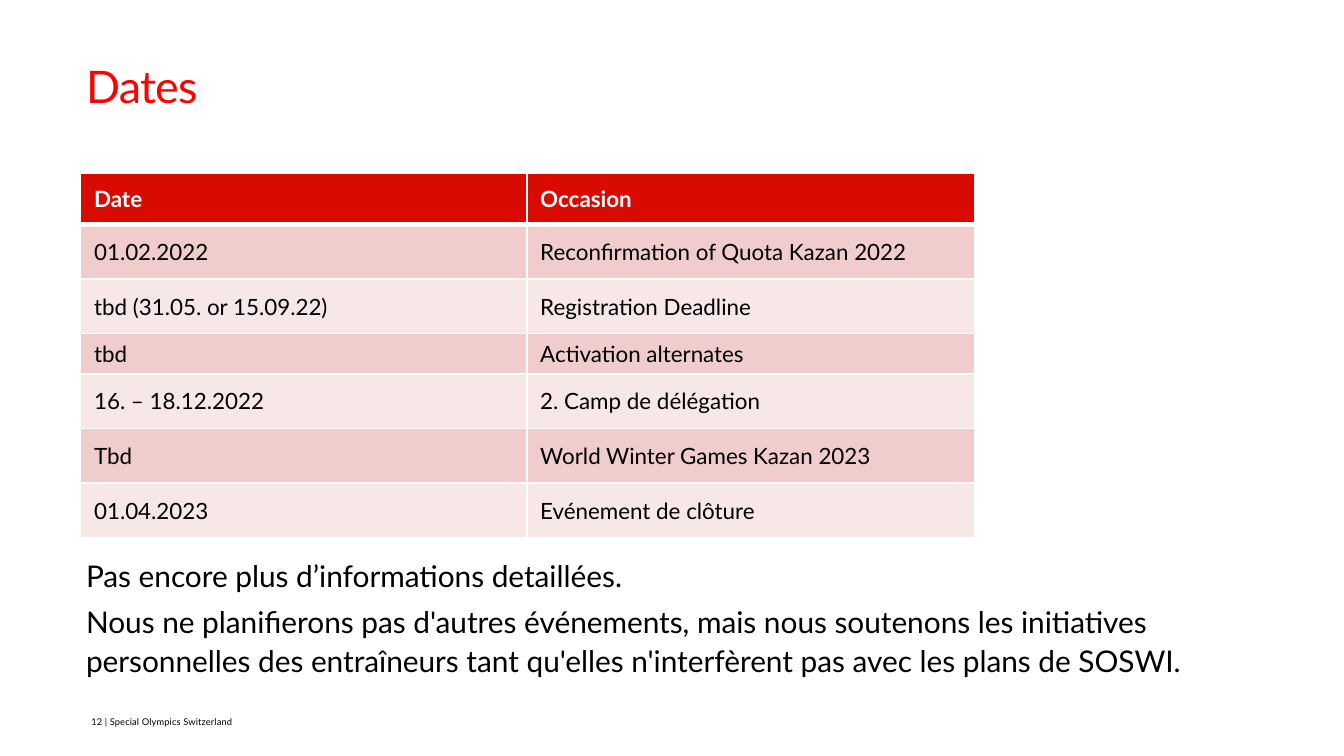
from lxml import etree
from pptx import Presentation
from pptx.dml.color import RGBColor
from pptx.enum.text import MSO_ANCHOR, PP_ALIGN
from pptx.oxml.ns import qn
from pptx.util import Inches, Pt

MIDDLE, TOP = MSO_ANCHOR.MIDDLE, MSO_ANCHOR.TOP
LEFT = PP_ALIGN.LEFT
TITLE_ONLY = 5
FONT = "Lato"
COLORS = {
    "title": "FF0000",
    "text": "000000",
    "white": "FFFFFF",
    "header": "D90B00",
    "odd": "F1CCCC",
    "even": "F8E7E7",
}
DATES = [
    ("Date", "Occasion"),
    ("01.02.2022", "Reconfirmation of Quota Kazan 2022"),
    ("tbd (31.05. or 15.09.22)", "Registration Deadline"),
    ("tbd", "Activation alternates"),
    ("16. – 18.12.2022", "2. Camp de délégation"),
    ("Tbd", "World Winter Games Kazan 2023"),
    ("01.04.2023", "Evénement de clôture"),
]
COLUMN_WIDTHS = [3.32, 3.33]
SPECIAL_HEIGHTS = {0: 0.38, 3: 0.3}  # header and the narrow row
REMARKS = [
    "Pas encore plus d’informations detaillées.",
    "Nous ne planifierons pas d'autres événements, mais nous soutenons les "
    "initiatives personnelles des entraîneurs tant qu'elles n'interfèrent pas "
    "avec les plans de SOSWI.",
]


def write_text(frame, lines, size, color, bold=False, tracking=None, **formats):
    """Fill a text frame, one paragraph a line; formats are paragraph values."""
    for index, line in enumerate(lines):
        para = frame.add_paragraph() if index else frame.paragraphs[0]
        values = {"alignment": LEFT, "space_before": Pt(0), **formats}
        if index == 0:
            values["space_before"] = Pt(0)
        for name, value in values.items():
            setattr(para, name, value)
        span = para.add_run()
        span.text = line
        for name, value in {"name": FONT, "size": Pt(size), "bold": bold}.items():
            setattr(span.font, name, value)
        span.font.color.rgb = RGBColor.from_string(COLORS[color])
        if tracking is not None:
            span.font._element.set("spc", str(round(tracking * 100)))


def set_frame(frame, anchor, side=0.04):
    values = {
        "word_wrap": True,
        "vertical_anchor": anchor,
        "margin_left": Inches(side),
        "margin_right": Inches(side),
        "margin_top": Inches(0.04),
        "margin_bottom": Inches(0.04),
    }
    for name, value in values.items():
        setattr(frame, name, value)


def place_title(page, left, top, width, height):
    title = page.shapes.title
    title.left, title.top = Inches(left), Inches(top)
    title.width, title.height = Inches(width), Inches(height)
    set_frame(title.text_frame, MIDDLE)
    write_text(title.text_frame, ["Dates"], 24, "title", tracking=-0.4,
               line_spacing=Pt(15.2))


def set_borders(cell, row):
    """Draw white rules, with a heavier one below the header."""
    properties = cell._tc.get_or_add_tcPr()
    for side in "LRTB":
        heavy = (side, row) in (("B", 0), ("T", 1))
        line = etree.SubElement(properties, qn(f"a:ln{side}"),
                                w=str(Pt(3 if heavy else 1)))
        fill = etree.SubElement(line, qn("a:solidFill"))
        etree.SubElement(fill, qn("a:srgbClr"), val=COLORS["white"])


def place_dates(page, left, top, width, height):
    table = page.shapes.add_table(len(DATES), 2, Inches(left), Inches(top),
                                  Inches(width), Inches(height)).table
    for column, column_width in zip(table.columns, COLUMN_WIDTHS):
        column.width = Inches(column_width)
    # Ordinary rows share the height that is left
    ordinary = ((height - sum(SPECIAL_HEIGHTS.values()))
                / (len(DATES) - len(SPECIAL_HEIGHTS)))
    for index, entries in enumerate(DATES):
        row = table.rows[index]
        row.height = Inches(SPECIAL_HEIGHTS.get(index, ordinary))
        is_header = index == 0
        shade = "header" if is_header else "odd" if index % 2 else "even"
        for cell, entry in zip(row.cells, entries):
            cell.vertical_anchor = MIDDLE
            set_borders(cell, index)
            cell.fill.solid()
            cell.fill.fore_color.rgb = RGBColor.from_string(COLORS[shade])
            write_text(cell.text_frame, [entry], 12,
                       "white" if is_header else "text", bold=is_header)


def place_remarks(page, left, top, width, height):
    box = page.shapes.add_textbox(Inches(left), Inches(top),
                                  Inches(width), Inches(height))
    set_frame(box.text_frame, TOP)
    write_text(box.text_frame, REMARKS, 16, "text",
               line_spacing=1.1, space_before=Pt(3.6))


def place_footer(page, left, top, width, height):
    box = page.shapes.add_textbox(Inches(left), Inches(top),
                                  Inches(width), Inches(height))
    set_frame(box.text_frame, TOP, side=0.07)
    write_text(box.text_frame, ["12 | Special Olympics Switzerland"], 5, "text",
               tracking=0.05)


def main():
    deck = Presentation()
    deck.slide_width = Inches(10)
    deck.slide_height = deck.slide_width * 9 // 16
    page = deck.slides.add_slide(deck.slide_layouts[TITLE_ONLY])
    place_title(page, 0.6, 0.3, 7.71, 0.86)
    place_remarks(page, 0.6, 4.08, 8.65, 1.13)
    place_footer(page, 0.61, 5.29, 3.97, 0.15)
    place_dates(page, 0.6, 1.29, 6.66, 2.71)
    deck.save("out.pptx")


if __name__ == "__main__":
    main()
